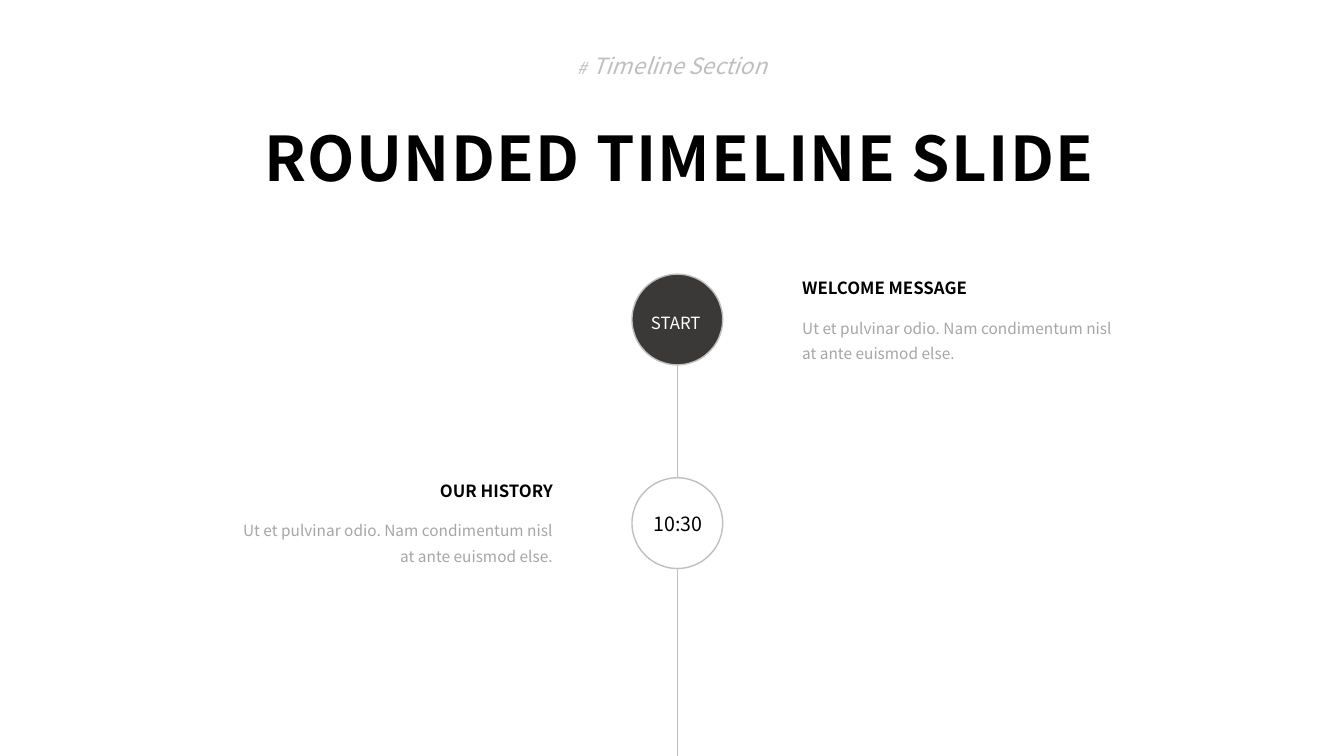
from pptx import Presentation
from pptx.dml.color import RGBColor
from pptx.enum.shapes import MSO_CONNECTOR, MSO_SHAPE
from pptx.enum.text import MSO_ANCHOR, PP_ALIGN
from pptx.oxml.ns import qn
from pptx.util import Pt
from lxml.etree import SubElement

FONT = "Noto Sans CJK SC"
GREY = "BFBFBF"
AXIS_X = 483.84
CIRCLE = 64.8


def rgb(value):
    return RGBColor.from_string(value)


def add_text(box, paragraphs, wrap=True, anchor=MSO_ANCHOR.TOP):
    """Each paragraph is (paragraph format, font format, colour, [(text, size), ...])."""
    tf = s.shapes.add_textbox(*map(Pt, box)).text_frame
    tf.word_wrap, tf.vertical_anchor = wrap, anchor
    for i, (p_format, r_format, colour, runs) in enumerate(paragraphs):
        p = tf.add_paragraph() if i else tf.paragraphs[0]
        for name, value in p_format.items():
            setattr(p, name, value)
        for text, size in runs:
            r = p.add_run()
            r.text = text
            r.font.color.rgb = rgb(colour)
            for name, value in {"name": FONT, "size": Pt(size), **r_format}.items():
                setattr(r.font, name, value)
    return tf


prs = Presentation()
prs.slide_width, prs.slide_height = Pt(960), Pt(540)
s = prs.slides.add_slide(prs.slide_layouts[6])

# Timeline axis
for top, bottom in [(240.5, 360.7), (406, 540)]:
    line = s.shapes.add_connector(
        MSO_CONNECTOR.STRAIGHT, Pt(AXIS_X), Pt(top), Pt(AXIS_X), Pt(bottom))
    line.line.color.rgb = rgb(GREY)
    line.line.width = Pt(0.5)
    SubElement(line._element.spPr, qn("a:effectLst"))

# Heading
add_text((324, 36, 312, 29.5), [
    ({"alignment": PP_ALIGN.CENTER, "line_spacing": Pt(18), "space_before": Pt(12)},
     {"italic": True}, GREY, [("#", 12), (" ", 20), ("Timeline Section", 16)])])
title = add_text((160, 86.4, 640, 57.6), [
    ({"alignment": PP_ALIGN.CENTER, "line_spacing": 0.9}, {"bold": True},
     "000000", [(" ROUNDED TIMELINE SLIDE", 44)])], anchor=MSO_ANCHOR.MIDDLE)
title.paragraphs[0].runs[0].font._element.set("spc", "100")

# Timeline stops: circle top, fill, label, label box, label format, heading, text box, alignment
stops = [
    (195.84, "3B3838", "START", (457.9, 216, 50.4, 23.8), 12, "FFFFFF", PP_ALIGN.LEFT,
     "WELCOME MESSAGE", (565.9, 196.6), PP_ALIGN.LEFT),
    (341.28, "FFFFFF", "10:30", (458.6, 360.7, 51.1, 24.5), 14, "000000", PP_ALIGN.CENTER,
     "OUR HISTORY", (162, 341.3), PP_ALIGN.RIGHT),
]
for (top, fill, label, label_box, size, colour, label_align,
     heading, corner, align) in stops:
    sp = s.shapes.add_shape(
        MSO_SHAPE.OVAL, Pt(AXIS_X - CIRCLE / 2), Pt(top), Pt(CIRCLE), Pt(CIRCLE))
    sp.shadow.inherit = False
    sp.fill.solid()
    sp.fill.fore_color.rgb = rgb(fill)
    sp.line.color.rgb = rgb(GREY)
    sp.line.width = Pt(1)
    add_text(label_box, [({"alignment": label_align, "line_spacing": Pt(18)}, {},
                          colour, [(label, size)])], wrap=False)
    spacing = {"alignment": align, "space_before": Pt(10)}
    add_text((*corner, 240, 113), [
        ({**spacing, "line_spacing": 0.9}, {"bold": True}, "000000", [(heading, 12)]),
        ({**spacing, "line_spacing": Pt(18)}, {}, "A6A6A6",
         [("Ut et pulvinar odio. Nam condimentum nisl at ante euismod else.", 11)])])

prs.save("out.pptx")
